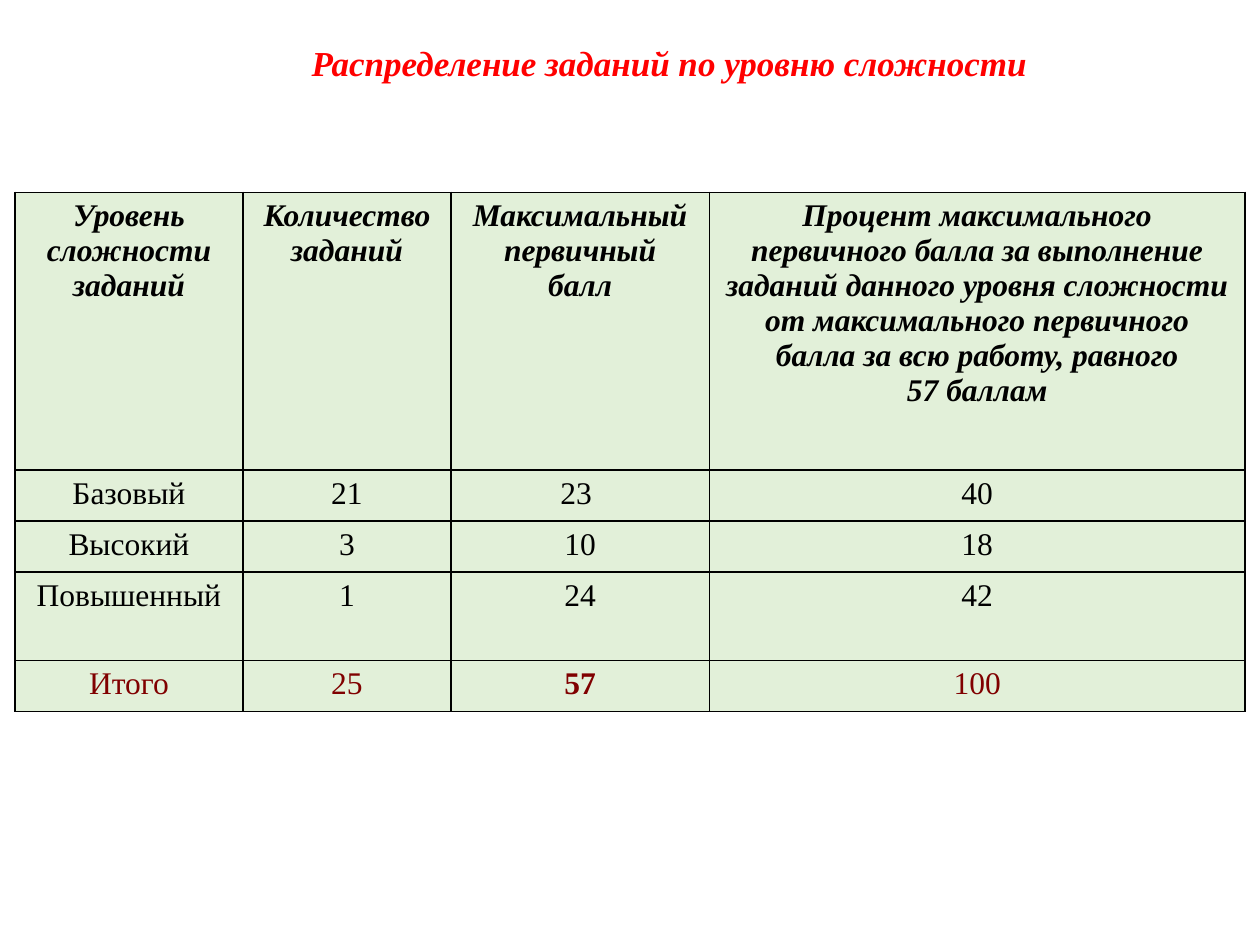
import pptx
import pptx.dml.color
import pptx.enum.text
import pptx.oxml.ns
import pptx.util
from lxml import etree

Cm = pptx.util.Cm
Pt = pptx.util.Pt

COLORS = {
    "title": "FF0000",
    "text": "000000",
    "total": "800000",
    "cell": "E2F0D9",
    "border": "000000",
}
FONT = "Times New Roman"

COLUMN_WIDTHS = [4.6, 4.19, 5.21, 10.8]
ROW_HEIGHTS = [5.59, 1.03, 1.03, 1.78, 1.03]
ROWS = [
    [
        "Уровень\nсложности\nзаданий",
        "Количество\nзаданий",
        "Максимальный\nпервичный\nбалл",
        "Процент максимального\n"
        "первичного балла за выполнение заданий данного уровня сложности "
        "от максимального первичного балла за всю работу, равного\n"
        "57 баллам",
    ],
    ["Базовый", "21", "23 ", "40"],
    ["Высокий", "3", "10", "18"],
    ["Повышенный", "1", "24", "42"],
    ["Итого", "25", "57", "100"],
]


def rgb(name):
    return pptx.dml.color.RGBColor.from_string(COLORS[name])


def write_text(text_frame, text, size, color, bold=False, italic=False):
    text_frame.text = text
    for paragraph in text_frame.paragraphs:
        paragraph.alignment = pptx.enum.text.PP_ALIGN.CENTER
        for run in paragraph.runs:
            run.font.name = FONT
            run.font.size = Pt(size)
            run.font.bold = bold
            run.font.italic = italic
            run.font.color.rgb = rgb(color)


def add_borders(cell):
    qn = pptx.oxml.ns.qn
    properties = cell._tc.get_or_add_tcPr()
    for side in ("lnL", "lnR", "lnT", "lnB"):
        line = etree.SubElement(properties, qn(f"a:{side}"), w=str(Pt(1)))
        fill = etree.SubElement(line, qn("a:solidFill"))
        etree.SubElement(fill, qn("a:srgbClr"), val=COLORS["border"])


def add_title(slide, text):
    shape = slide.shapes.add_textbox(Cm(1.9), Cm(0.71), Cm(23.19), Cm(1.11))
    shape.text_frame.word_wrap = True
    shape.text_frame.auto_size = pptx.enum.text.MSO_AUTO_SIZE.SHAPE_TO_FIT_TEXT
    write_text(shape.text_frame, text, 20, "title", bold=True, italic=True)


def add_score_table(slide):
    shape = slide.shapes.add_table(
        len(ROWS), len(COLUMN_WIDTHS), Cm(0.3), Cm(3.88),
        Cm(sum(COLUMN_WIDTHS)), Cm(sum(ROW_HEIGHTS)))
    table = shape.table
    for column, width in zip(table.columns, COLUMN_WIDTHS):
        column.width = Cm(width)
    for row, height in zip(table.rows, ROW_HEIGHTS):
        row.height = Cm(height)

    for row_index, texts in enumerate(ROWS):
        header = row_index == 0
        total = row_index == len(ROWS) - 1
        for column_index, text in enumerate(texts):
            cell = table.cell(row_index, column_index)
            # Borders come before the fill in the cell properties
            add_borders(cell)
            cell.fill.solid()
            cell.fill.fore_color.rgb = rgb("cell")
            # The total score is the only bold figure
            bold = header or (total and column_index == 2)
            write_text(cell.text_frame, text, 18,
                       "total" if total else "text", bold, header)


def main():
    presentation = pptx.Presentation()
    presentation.slide_width = Cm(25.4)
    presentation.slide_height = Cm(19.05)
    slide = presentation.slides.add_slide(presentation.slide_layouts[6])

    # Title
    add_title(slide, "Распределение заданий по уровню сложности")
    # Tasks and scores by level of difficulty
    add_score_table(slide)

    presentation.save("out.pptx")


if __name__ == "__main__":
    main()
